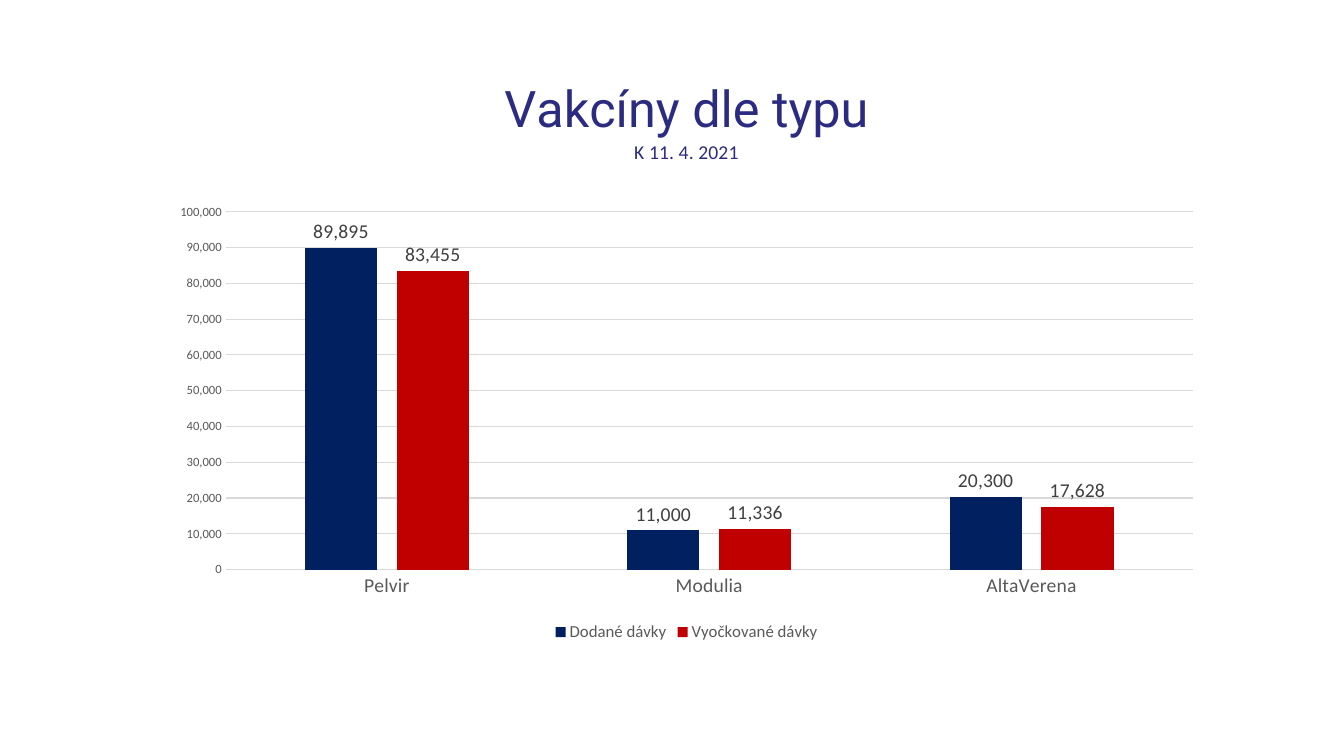
import pptx
import pptx.chart.data
import pptx.dml.color
import pptx.enum.chart
import pptx.util
from lxml import etree
from pptx.util import Inches

# Content
TITLE = "Vakcíny dle typu"
SUBTITLE = "K 11. 4. 2021"
VACCINES = ["Pelvir", "Modulia", "AltaVerena"]
DOSES = {
    "Dodané dávky": (89895, 11000, 20300),
    "Vyočkované dávky": (83455, 11336, 17628),
}
NUMBER_FORMAT = "#,##0"

THEME = {
    "font": "Calibri", "title_font": "Roboto",
    "title": "2B2B82", "text": "595959", "label": "404040", "grid": "D9D9D9",
    "series": ("002060", "C00000"),
    "title_size": 36, "large": 14, "legend_size": 12, "small": 9, "base": 10,
}

# Plot area as shares of the chart frame
PLOT = {"x": 0.063, "y": 0.261, "w": 0.917, "h": 0.609}


def rgb(value):
    return pptx.dml.color.RGBColor.from_string(value)


def style(font, size, color, name=THEME["font"]):
    font.size = pptx.util.Pt(size)
    font.color.rgb = rgb(color)
    font.name = name
    font.bold = False


def style_line(line):
    line.color.rgb = rgb(THEME["grid"])
    line.width = pptx.util.Pt(0.75)


def place_plot(chart):
    """Fix the inner plot area, leaving room for the heading above it."""
    ns = "http://schemas.openxmlformats.org/drawingml/2006/chart"
    area = chart._chartSpace.find(f".//{{{ns}}}plotArea")
    for old in area.findall(f"{{{ns}}}layout"):
        area.remove(old)
    layout = etree.Element(f"{{{ns}}}layout")
    manual = etree.SubElement(layout, f"{{{ns}}}manualLayout")
    settings = {"layoutTarget": "inner", "xMode": "edge", "yMode": "edge", **PLOT}
    for tag, value in settings.items():
        etree.SubElement(manual, f"{{{ns}}}{tag}").set("val", str(value))
    area.insert(0, layout)


def add_title(chart):
    chart.has_title = True
    chart.chart_title.include_in_layout = False
    tf = chart.chart_title.text_frame
    tf.text = TITLE
    style(tf.paragraphs[0].font, THEME["title_size"], THEME["title"], THEME["title_font"])
    p = tf.add_paragraph()
    p.text = SUBTITLE
    style(p.font, THEME["large"], THEME["title"])
    # Title runs carry the same formatting as their paragraphs
    style(tf.paragraphs[0].runs[0].font, THEME["title_size"], THEME["title"],
          THEME["title_font"])
    style(p.runs[0].font, THEME["large"], THEME["title"])


def format_axes(chart):
    xl = pptx.enum.chart
    for axis, size in ((chart.category_axis, THEME["large"]),
                       (chart.value_axis, THEME["small"])):
        axis.major_tick_mark = axis.minor_tick_mark = xl.XL_TICK_MARK.NONE
        style(axis.tick_labels.font, size, THEME["text"])
    style_line(chart.category_axis.format.line)
    values = chart.value_axis
    values.minimum_scale, values.maximum_scale, values.major_unit = 0, 100000, 10000
    values.format.line.fill.background()
    values.has_major_gridlines = True
    style_line(values.major_gridlines.format.line)
    values.tick_labels.number_format = NUMBER_FORMAT
    values.tick_labels.number_format_is_linked = False


def format_columns(plot):
    plot.gap_width = 219
    plot.overlap = -27
    plot.vary_by_categories = False
    for series, color in zip(plot.series, THEME["series"]):
        series.format.fill.solid()
        series.format.fill.fore_color.rgb = rgb(color)
        labels = series.data_labels
        labels.show_value = True
        labels.position = pptx.enum.chart.XL_LABEL_POSITION.OUTSIDE_END
        labels.number_format = NUMBER_FORMAT
        labels.number_format_is_linked = False
        style(labels.font, THEME["large"], THEME["label"])


def main():
    prs = pptx.Presentation()
    prs.slide_width, prs.slide_height = Inches(13.33), Inches(7.5)
    slide = prs.slides.add_slide(prs.slide_layouts.get_by_name("Blank"))

    # Chart with its own heading
    data = pptx.chart.data.CategoryChartData(number_format=NUMBER_FORMAT)
    data.categories = VACCINES
    for name, values in DOSES.items():
        data.add_series(name, values)
    chart = slide.shapes.add_chart(
        pptx.enum.chart.XL_CHART_TYPE.COLUMN_CLUSTERED,
        Inches(1.58), Inches(0.58), Inches(10.46), Inches(5.83), data).chart
    style(chart.font, THEME["base"], "000000")
    add_title(chart)
    format_axes(chart)
    format_columns(chart.plots[0])
    place_plot(chart)

    # Legend
    chart.has_legend = True
    chart.legend.position = pptx.enum.chart.XL_LEGEND_POSITION.BOTTOM
    chart.legend.include_in_layout = False
    style(chart.legend.font, THEME["legend_size"], THEME["text"])

    prs.save("out.pptx")


if __name__ == "__main__":
    main()
